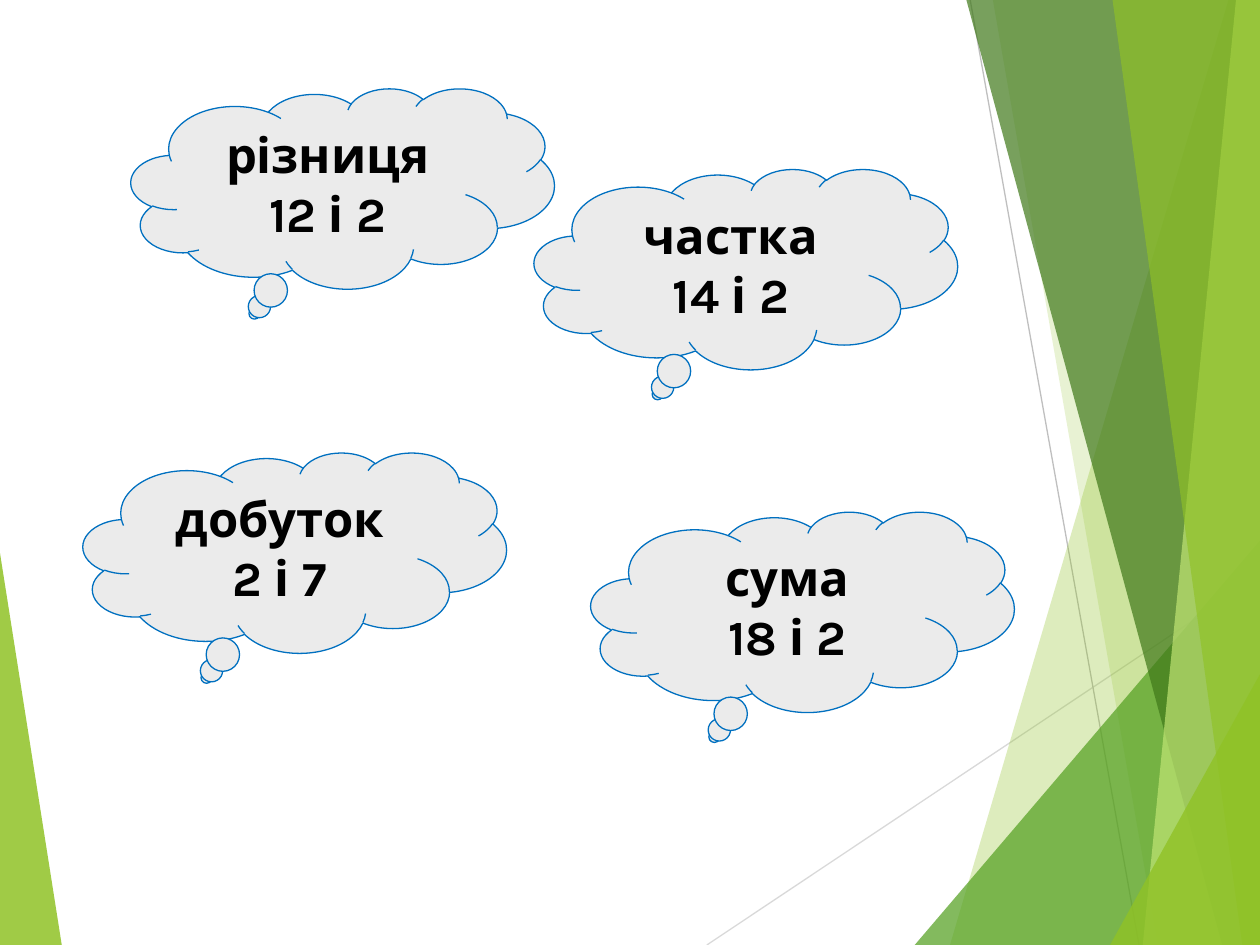
from lxml import etree
from pptx import Presentation
from pptx.dml.color import RGBColor
from pptx.enum import shapes, text
from pptx.oxml.ns import qn
from pptx.util import Inches, Pt

W, H = 10, 7.5
CLOUD_W, CLOUD_H = 3.36, 1.59

LEFT_FACET = ([(0, 4.39), (0.49, H), (0, H)], "90C226", 85)
RAYS = [
    ((5.61, H), (W, 4.57), "D9D9D9"),
    ((7.7, 0), (9.04, H), "BFBFBF"),
]
RIGHT_FACETS = [
    ([(9.75, 0), (7.54, H), (W, H), (W, 0)], "90C226", 30),
    ([(7.88, 0), (9.19, H), (W, H), (W, 0)], "90C226", 20),
    ([(7.26, H), (W, 4.29), (W, H)], "54A021", 72),
    ([(7.67, 0), (9.7, H), (W, H), (W, 0)], "3F7819", 70),
    ([(9.81, 0), (9.07, H), (W, H), (W, 0)], "C0E474", 70),
    ([(8.83, 0), (9.86, H), (W, H), (W, 0)], "90C226", 65),
    ([(8.81, H), (W, 5.35), (W, H)], "90C226", 80),
]
CLOUDS = [
    (0.66, 3.59, "добуток", "2 і 7"),
    (4.69, 4.06, "сума", "18 і 2"),
    (1.04, 0.7, "різниця", "12 і 2"),
    (4.24, 1.34, "частка", "14 і 2"),
]


def rgb(value):
    return RGBColor.from_string(value)


def fill_solid(sp, color, opacity=100):
    sp.shadow.inherit = False
    sp.fill.solid()
    sp.fill.fore_color.rgb = rgb(color)
    if opacity < 100:
        clr = sp._element.spPr.find(qn("a:solidFill"))[0]
        etree.SubElement(clr, qn("a:alpha")).set("val", str(opacity * 1000))


def add_facet(s, points, color, opacity):
    corners = [(Inches(x), Inches(y)) for x, y in points]
    builder = s.shapes.build_freeform(*corners[0])
    builder.add_line_segments(corners[1:], close=True)
    sp = builder.convert_to_shape()
    fill_solid(sp, color, opacity)
    sp.line.fill.background()


def add_ray(s, start, end, color):
    ends = [Inches(v) for v in (*start, *end)]
    line = s.shapes.add_connector(shapes.MSO_CONNECTOR.STRAIGHT, *ends)
    line.line.color.rgb = rgb(color)
    line.line.width = Pt(0.75)
    etree.SubElement(line._element.spPr, qn("a:effectLst"))


def add_cloud(s, left, top, operation, numbers):
    sp = s.shapes.add_shape(shapes.MSO_SHAPE.CLOUD_CALLOUT, Inches(left),
                            Inches(top), Inches(CLOUD_W), Inches(CLOUD_H))
    fill_solid(sp, "EBEBEB")
    sp.line.color.rgb = rgb("0070C0")
    sp.line.width = Pt(0.75)
    tf = sp.text_frame
    tf.word_wrap = True
    tf.vertical_anchor = text.MSO_ANCHOR.TOP
    tf.text = f"{operation}\n{numbers}"
    for p in tf.paragraphs:
        p.alignment = text.PP_ALIGN.CENTER
        p.font.name = "Karla"
        p.font.size = Pt(28)
        p.font.bold = True
        p.font.color.rgb = rgb("000000")


def main():
    prs = Presentation()
    prs.slide_width, prs.slide_height = Inches(W), Inches(H)
    s = prs.slides.add_slide(prs.slide_layouts[6])
    add_facet(s, *LEFT_FACET)
    for ray in RAYS:
        add_ray(s, *ray)
    for facet in RIGHT_FACETS:
        add_facet(s, *facet)
    for cloud in CLOUDS:
        add_cloud(s, *cloud)
    prs.save("out.pptx")


if __name__ == "__main__":
    main()
